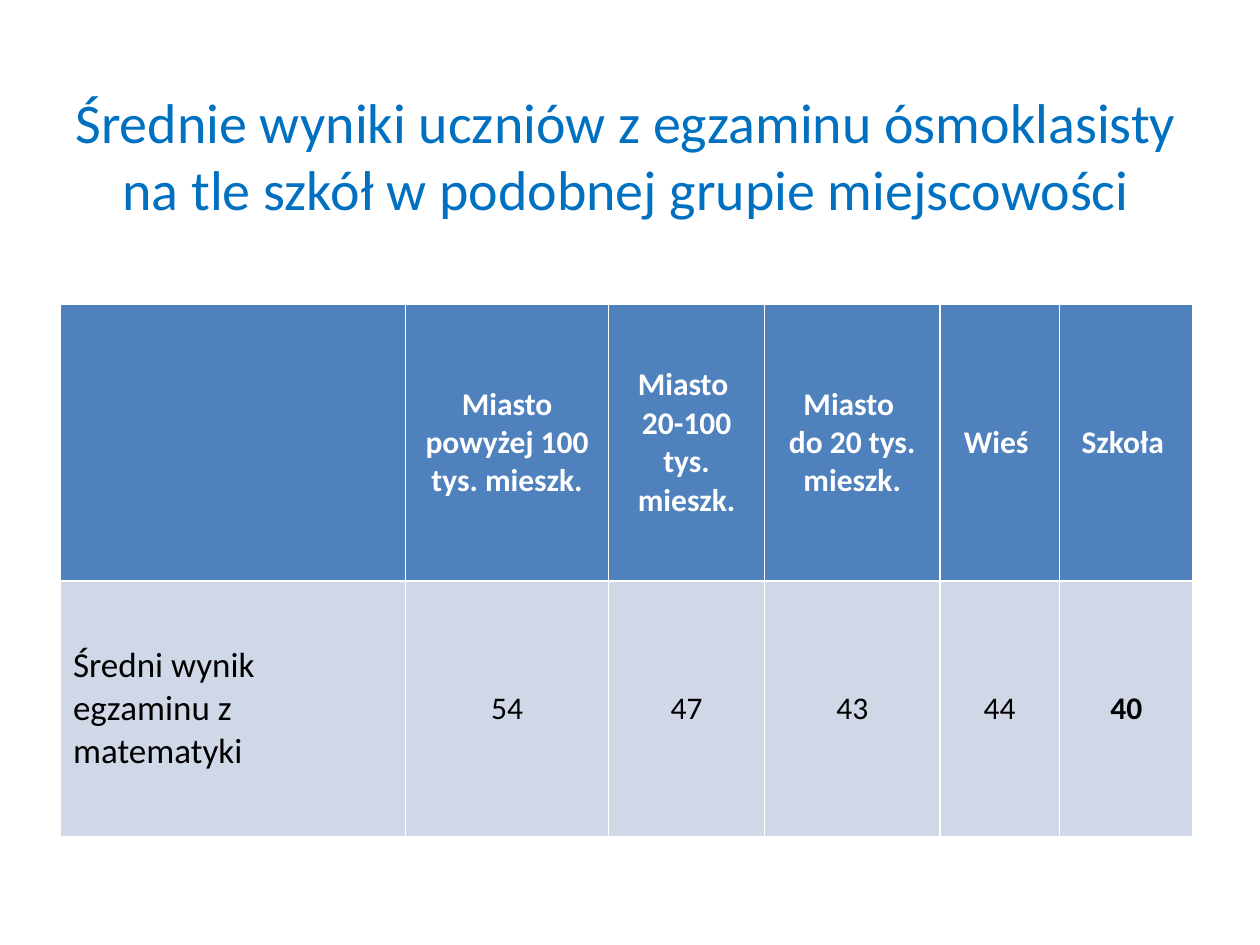
from pptx import Presentation
from pptx.dml.color import RGBColor
from pptx.enum.text import MSO_ANCHOR, PP_ALIGN
from pptx.util import Inches, Pt

TITLE_BLUE = RGBColor(0x00, 0x70, 0xC0)
HEADER_BLUE = RGBColor(0x4F, 0x81, 0xBD)
ROW_BLUE = RGBColor(0xD0, 0xD8, 0xE8)
WHITE = RGBColor(0xFF, 0xFF, 0xFF)
BLACK = RGBColor(0x00, 0x00, 0x00)

TITLE = "Średnie wyniki uczniów z egzaminu ósmoklasisty na tle szkół w podobnej grupie miejscowości"
RESULTS = [
    ["", "Miasto powyżej 100 tys. mieszk.", "Miasto \v20-100 tys. mieszk.",
     "Miasto \vdo 20 tys. mieszk.", "Wieś ", "Szkoła "],
    ["Średni wynik egzaminu z matematyki", "54", "47", "43", "44", "40"],
]
COLUMN_SHARES = [0.274, 0.161, 0.124, 0.139, 0.095, 0.106]
ROW_SHARES = [0.293, 0.27]


class SlideBuilder:
    font = "Calibri"

    def __init__(self, presentation):
        self.width = presentation.slide_width
        self.height = presentation.slide_height
        self.slide = presentation.slides.add_slide(presentation.slide_layouts[6])

    def box(self, left, top, width, height):
        return (int(left * self.width), int(top * self.height),
                int(width * self.width), int(height * self.height))

    def set_text(self, text_frame, text, size, color, bold=False, align=PP_ALIGN.CENTER):
        text_frame.text = text
        paragraph = text_frame.paragraphs[0]
        paragraph.alignment = align
        for run in paragraph.runs:
            run.font.name = self.font
            run.font.size = Pt(size)
            run.font.bold = bold
            run.font.color.rgb = color

    def title(self, text, *shares):
        text_frame = self.slide.shapes.add_textbox(*self.box(*shares)).text_frame
        text_frame.word_wrap = True
        text_frame.vertical_anchor = MSO_ANCHOR.MIDDLE
        self.set_text(text_frame, text, 32, TITLE_BLUE)

    def table(self, rows, left, top, column_shares, row_shares):
        box = self.box(left, top, sum(column_shares), sum(row_shares))
        table = self.slide.shapes.add_table(len(rows), len(rows[0]), *box).table
        for column, share in zip(table.columns, column_shares):
            column.width = int(share * self.width)
        for row, share in zip(table.rows, row_shares):
            row.height = int(share * self.height)
        for row_index, texts in enumerate(rows):
            for column_index, text in enumerate(texts):
                header = row_index == 0
                label = column_index == 0
                school = column_index == len(texts) - 1
                cell = table.cell(row_index, column_index)
                cell.vertical_anchor = MSO_ANCHOR.MIDDLE
                cell.fill.solid()
                cell.fill.fore_color.rgb = HEADER_BLUE if header else ROW_BLUE
                self.set_text(cell.text_frame, text, 20 if label else 18,
                              WHITE if header else BLACK, bold=header or school,
                              align=PP_ALIGN.LEFT if label else PP_ALIGN.CENTER)


def main():
    presentation = Presentation()
    presentation.slide_width = Inches(10)
    presentation.slide_height = Inches(7.5)
    builder = SlideBuilder(presentation)
    builder.title(TITLE, 0.047, 0.08, 0.9, 0.167)
    builder.table(RESULTS, 0.048, 0.322, COLUMN_SHARES, ROW_SHARES)
    presentation.save("out.pptx")


if __name__ == "__main__":
    main()
